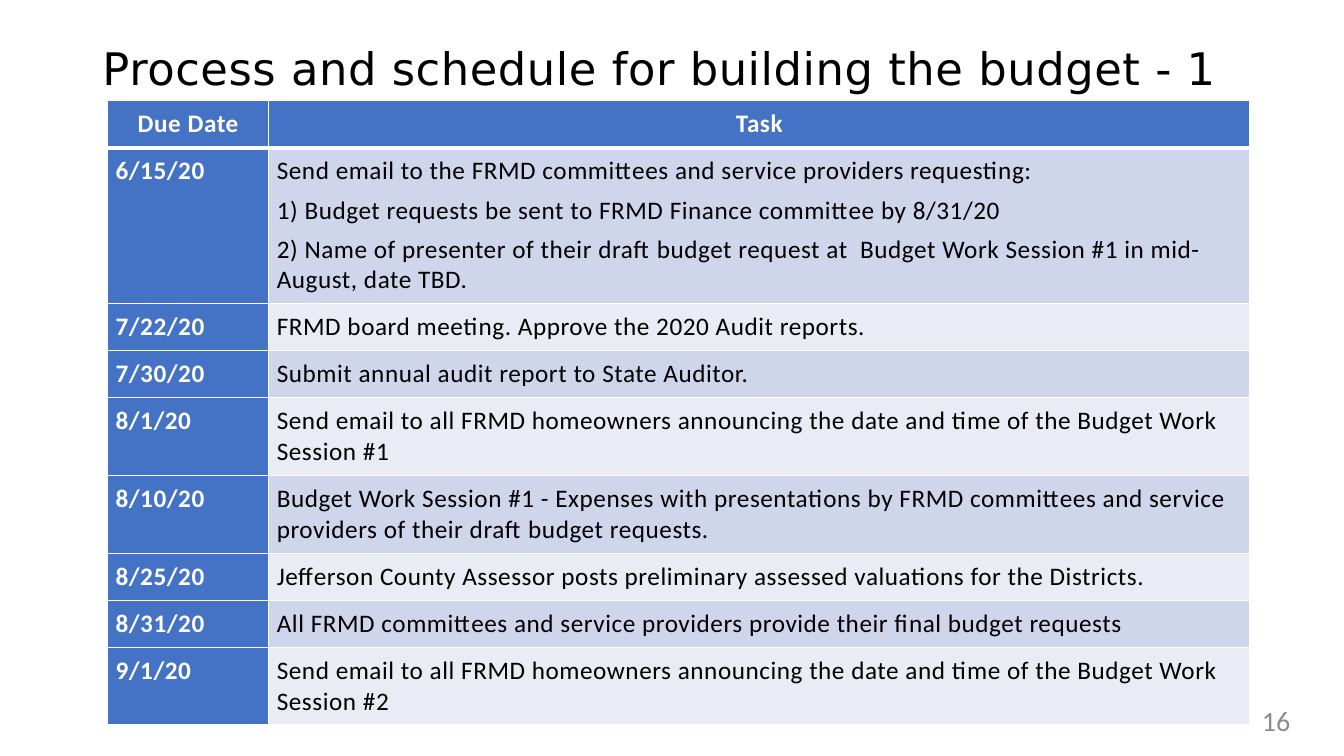
from lxml import etree
from pptx import Presentation, util as u
from pptx.dml.color import RGBColor
from pptx.enum import text as t
from pptx.oxml import ns

COLORS = {
    "black": "000000",
    "white": "FFFFFF",
    "gray": "8C8C8C",
    "blue": "4472C4",
    "dark_band": "CFD5EA",
    "light_band": "E9EBF5",
}

HEADINGS = ("Due Date", "Task")
SCHEDULE = [
    ("6/15/20", [
        "Send email to the FRMD committees and service providers requesting:",
        "1) Budget requests be sent to FRMD Finance committee by 8/31/20",
        "2) Name of presenter of their draft budget request at  Budget Work Session #1 in mid-August, date TBD.",
    ]),
    ("7/22/20", ["FRMD board meeting. Approve the 2020 Audit reports."]),
    ("7/30/20", ["Submit annual audit report to State Auditor."]),
    ("8/1/20", ["Send email to all FRMD homeowners announcing the date and time of the Budget Work Session #1"]),
    ("8/10/20", ["Budget Work Session #1 - Expenses with presentations by FRMD committees and service providers of their draft budget requests."]),
    ("8/25/20", ["Jefferson County Assessor posts preliminary assessed valuations for the Districts."]),
    ("8/31/20", ["All FRMD committees and service providers provide their final budget requests"]),
    ("9/1/20", ["Send email to all FRMD homeowners announcing the date and time of the Budget Work Session #2"]),
]
COLUMN_WIDTHS = (9.6, 58.4)
ROW_HEIGHTS = (2.8, 9.2, 2.8, 2.8, 4.6, 4.6, 2.8, 2.8, 4.6)


def rgb(name):
    return RGBColor.from_string(COLORS[name])


def write(frame, lines, size=18, font="Calibri", color="black", bold=False,
          align=t.PP_ALIGN.LEFT, gap=0, line_spacing=None, tracking=0):
    for index, line in enumerate(lines):
        paragraph = frame.add_paragraph() if index else frame.paragraphs[0]
        paragraph.alignment = align
        paragraph.space_before = paragraph.space_after = u.Pt(gap)
        paragraph.line_spacing = line_spacing
        run = paragraph.add_run()
        run.text = line
        run.font.size = u.Pt(size)
        run.font.name = font
        run.font.bold = bold
        run.font.color.rgb = rgb(color)
        if tracking:
            run.font._element.set("spc", str(round(tracking * 100)))


class SlideBuilder:
    columns, rows = 80, 45

    def __init__(self, presentation):
        self.width = presentation.slide_width
        self.height = presentation.slide_height
        self.slide = presentation.slides.add_slide(presentation.slide_layouts[5])

    def x(self, columns):
        return round(self.width * columns / self.columns)

    def y(self, rows):
        return round(self.height * rows / self.rows)

    def box(self, left, top, width, height):
        return self.x(left), self.y(top), self.x(width), self.y(height)

    def title(self, line, *area):
        shape = self.slide.shapes.title
        shape.left, shape.top, shape.width, shape.height = self.box(*area)
        self.frame(shape)
        write(shape.text_frame, [line], size=32, font="DejaVu Sans",
              line_spacing=0.9, tracking=0.4)

    def label(self, line, *area, **style):
        shape = self.slide.shapes.add_textbox(*self.box(*area))
        self.frame(shape)
        write(shape.text_frame, [line], **style)

    def frame(self, shape):
        frame = shape.text_frame
        frame.word_wrap = True
        frame.auto_size = t.MSO_AUTO_SIZE.NONE
        frame.vertical_anchor = t.MSO_ANCHOR.MIDDLE

    def table(self, left, top, widths, heights, headings, entries):
        area = self.box(left, top, sum(widths), sum(heights))
        table = self.slide.shapes.add_table(len(heights), len(widths), *area).table
        for column, width in zip(table.columns, widths):
            column.width = self.x(width)
        for row, height in zip(table.rows, heights):
            row.height = self.y(height)
        for column, heading in enumerate(headings):
            self.cell(table.cell(0, column), [heading], "blue", bottom=3,
                      color="white", bold=True, align=t.PP_ALIGN.CENTER)
        for row, (date, tasks) in enumerate(entries, 1):
            top_line = 3 if row == 1 else 1
            band = "dark_band" if row % 2 else "light_band"
            self.cell(table.cell(row, 0), [date], "blue", top=top_line,
                      color="white", bold=True)
            self.cell(table.cell(row, 1), tasks, band, top=top_line)

    def cell(self, cell, lines, fill, top=1, bottom=1, **style):
        cell.margin_left = cell.margin_right = u.Inches(0.08)
        cell.margin_top = cell.margin_bottom = u.Inches(0.08)
        cell.fill.solid()
        cell.fill.fore_color.rgb = rgb(fill)
        properties = cell._tc.get_or_add_tcPr()
        borders = {"a:lnL": 1, "a:lnR": 1, "a:lnT": top, "a:lnB": bottom}
        for index, (tag, points) in enumerate(borders.items()):
            line = etree.Element(ns.qn(tag), w=str(u.Pt(points)))
            solid = etree.SubElement(line, ns.qn("a:solidFill"))
            etree.SubElement(solid, ns.qn("a:srgbClr"), val=COLORS["white"])
            properties.insert(index, line)
        write(cell.text_frame, lines, gap=3, tracking=0.4, **style)


def main():
    presentation = Presentation()
    presentation.slide_width = u.Inches(13.33)
    presentation.slide_height = u.Inches(7.5)
    builder = SlideBuilder(presentation)
    builder.title("Process and schedule for building the budget - 1", 5.5, 2.4, 69, 3.6)
    builder.label("16", 56.5, 41.7, 20.9, 2.4, size=20, color="gray",
                  align=t.PP_ALIGN.RIGHT)
    builder.table(6.4, 6, COLUMN_WIDTHS, ROW_HEIGHTS, HEADINGS, SCHEDULE)
    presentation.save("out.pptx")


if __name__ == "__main__":
    main()
